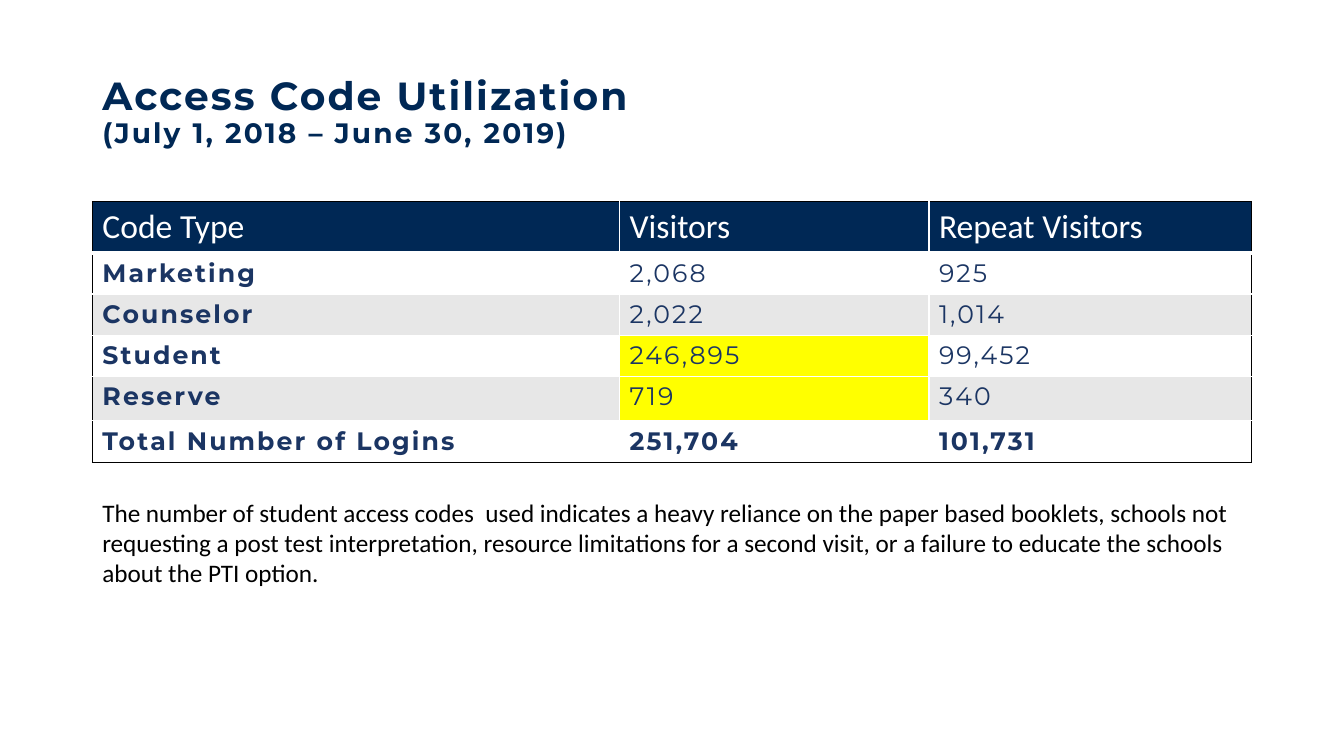
"""Build the access code utilization slide."""
from typing import NamedTuple, Optional

from lxml import etree
from pptx import Presentation
from pptx.dml.color import RGBColor
from pptx.enum.text import MSO_ANCHOR, MSO_AUTO_SIZE, PP_ALIGN
from pptx.oxml.ns import qn
from pptx.util import Pt

MIDDLE = MSO_ANCHOR.MIDDLE
NO_AUTOFIT = MSO_AUTO_SIZE.NONE
LEFT_ALIGNED = PP_ALIGN.LEFT

NAVY = RGBColor(0x00, 0x28, 0x55)
INDIGO = RGBColor(0x1B, 0x35, 0x63)
WHITE = RGBColor(0xFF, 0xFF, 0xFF)
BLACK = RGBColor(0x00, 0x00, 0x00)
GREY = RGBColor(0xE7, 0xE7, 0xE7)
YELLOW = RGBColor(0xFF, 0xFF, 0x00)

MARGIN = Pt(66)
CONTENT_WIDTH = Pt(828)
COLUMN_WIDTHS = (Pt(376.6), Pt(221), Pt(230.4))


class TextStyle(NamedTuple):
    size: float
    font: str
    color: RGBColor
    bold: bool = False
    spacing: float = 0


class CodeRow(NamedTuple):
    texts: tuple[str, str, str]
    height: float = 29.5
    fill: Optional[RGBColor] = None
    visitors_fill: Optional[RGBColor] = None
    bold: bool = False


HEADING = TextStyle(28, "Montserrat", NAVY, True, 1.5)
PERIOD = HEADING._replace(size=20)
HEADER = TextStyle(24, "Calibri", WHITE)
FIGURE = TextStyle(18, "Montserrat", INDIGO, False, 1.5)
NOTE = TextStyle(18, "Calibri", BLACK)

CODE_ROWS = (
    CodeRow(("Code Type", "Visitors", "Repeat Visitors"), 36.5, NAVY, NAVY),
    CodeRow(("Marketing", "2,068", "925")),
    CodeRow(("Counselor", "2,022", "1,014"), fill=GREY, visitors_fill=GREY),
    CodeRow(("Student", "246,895", "99,452"), visitors_fill=YELLOW),
    CodeRow(("Reserve", "719", "340"), 31.7, GREY, YELLOW),
    CodeRow(("Total Number of Logins", "251,704", "101,731"), bold=True),
)
INTERPRETATION = (
    "The number of student access codes  used indicates a heavy reliance on "
    "the paper based booklets, schools not requesting a post test "
    "interpretation, resource limitations for a second visit, or a failure "
    "to educate the schools about the PTI option."
)


def write(paragraph, text: str, style: TextStyle) -> None:
    run = paragraph.add_run()
    run.text = text
    run.font.size = Pt(style.size)
    run.font.name = style.font
    run.font.bold = style.bold
    run.font.color.rgb = style.color
    if style.spacing:
        run.font._element.set("spc", str(int(style.spacing * 100)))


def add_border(cell, side: str, color: RGBColor, width: float) -> None:
    properties = cell._tc.get_or_add_tcPr()
    line = etree.SubElement(properties, qn(f"a:ln{side}"), w=str(Pt(width)))
    solid = etree.SubElement(line, qn("a:solidFill"))
    etree.SubElement(solid, qn("a:srgbClr"), val=str(color))


def add_title(slide) -> None:
    title = slide.shapes.title
    title.left, title.top = MARGIN, Pt(28.8)
    title.width, title.height = CONTENT_WIDTH, Pt(104.4)
    frame = title.text_frame
    frame.auto_size = NO_AUTOFIT
    frame.vertical_anchor = MIDDLE
    paragraph = frame.paragraphs[0]
    paragraph.alignment = LEFT_ALIGNED
    paragraph.line_spacing = 0.9
    write(paragraph, "Access Code Utilization", HEADING)
    paragraph.add_line_break()
    write(paragraph, "(July 1, 2018 – June 30, 2019)", PERIOD)


def add_code_table(slide) -> None:
    total_height = Pt(sum(row.height for row in CODE_ROWS))
    table = slide.shapes.add_table(
        len(CODE_ROWS), len(COLUMN_WIDTHS), MARGIN, Pt(144), CONTENT_WIDTH, total_height
    ).table
    for column, width in zip(table.columns, COLUMN_WIDTHS):
        column.width = width
    last_row, last_column = len(CODE_ROWS) - 1, len(COLUMN_WIDTHS) - 1
    for r, row in enumerate(CODE_ROWS):
        table.rows[r].height = Pt(row.height)
        for c, text in enumerate(row.texts):
            cell = table.cell(r, c)
            outer_edges = {"L": c == 0, "R": c == last_column, "T": r == 0, "B": r == last_row}
            for side, outer in outer_edges.items():
                under_header = (r, side) in ((0, "B"), (1, "T"))
                add_border(cell, side, BLACK if outer else WHITE, 3 if under_header else 1)
            fill = row.visitors_fill if c == 1 else row.fill
            if fill is None:
                cell.fill.background()
            else:
                cell.fill.solid()
                cell.fill.fore_color.rgb = fill
            style = HEADER if r == 0 else FIGURE._replace(bold=row.bold or c == 0)
            write(cell.text_frame.paragraphs[0], text, style)


def add_interpretation(slide) -> None:
    note = slide.shapes.add_textbox(MARGIN, Pt(351.4), CONTENT_WIDTH, Pt(72.7))
    note.text_frame.word_wrap = True
    write(note.text_frame.paragraphs[0], INTERPRETATION, NOTE)


def main() -> None:
    deck = Presentation()
    deck.slide_width, deck.slide_height = Pt(960), Pt(540)
    slide = deck.slides.add_slide(deck.slide_layouts[5])
    add_title(slide)
    add_code_table(slide)
    add_interpretation(slide)
    deck.save("out.pptx")


if __name__ == "__main__":
    main()
